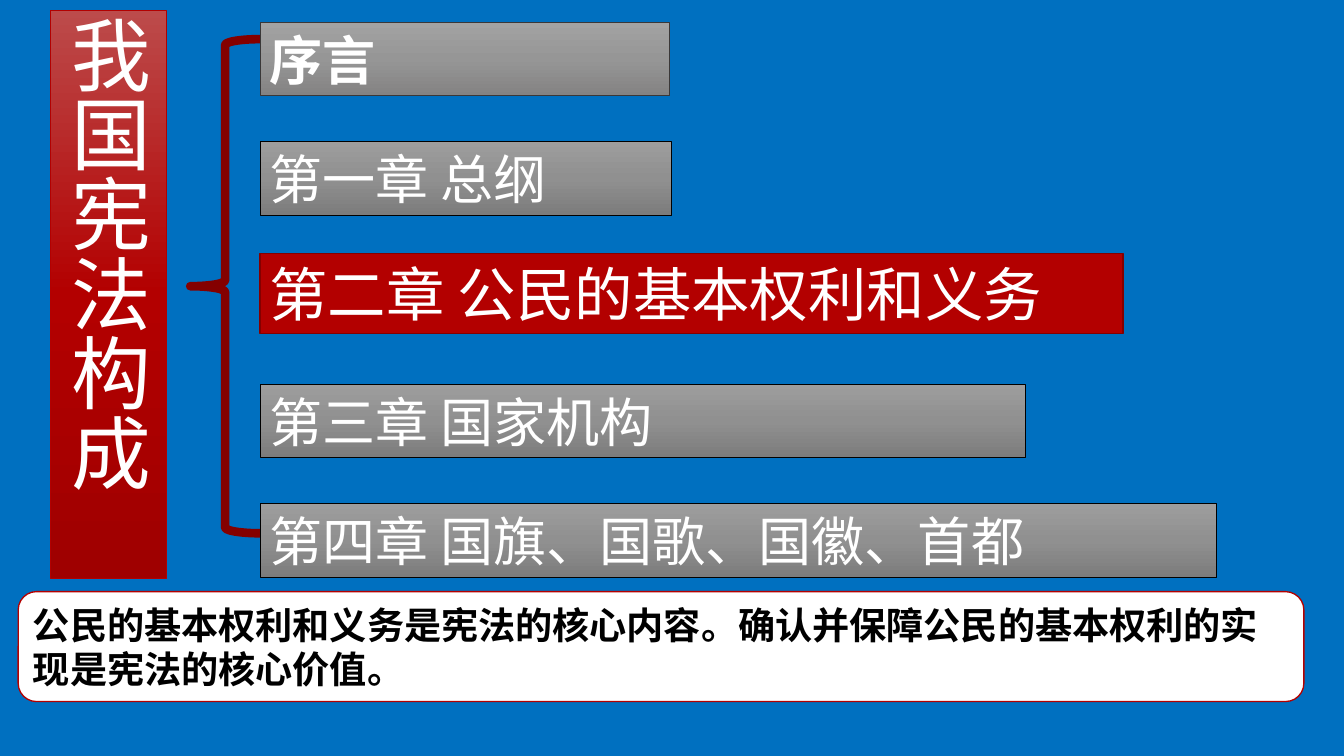
import copy
import pptx
import pptx.util
import pptx.dml.color
import pptx.enum.shapes
import pptx.enum.text
import pptx.oxml.ns
from lxml import etree

SIZE = (14.06, 7.91)
FONT = "Calibri"
COLORS = {
    "back": "0070C0", "white": "FFFFFF", "black": "000000",
    "red": "B30000", "dark": "840000", "slate": "3A3838",
}
FADES = {
    "title": ("BC4B4B", "B30000", "9F0000"),
    "intro": ("A3A3A3", "969696", "848383"),
    "plain": ("9D9D9D", "909090", "7C7C7C"),
}
TITLE = "我国宪法构成"
LEFT = 2.72  # shared left edge of the chapter bars
# text, top, width, height, fill, line colour, line width, size, bold
BARS = [
    ("序言", 0.23, 4.28, 0.77, "intro", "slate", 0.5, 40, True),
    ("第一章 总纲", 1.48, 4.3, 0.77, "plain", "black", 0.5, 40, False),
    ("第二章 公民的基本权利和义务", 2.65, 9.03, 0.84, "red", "dark", 1, 44, False),
    ("第三章 国家机构", 4.02, 8.01, 0.77, "plain", "black", 0.5, 40, False),
    ("第四章 国旗、国歌、国徽、首都", 5.27, 10.01, 0.77, "plain", "black", 0.5, 40, False),
]
NOTE = "公民的基本权利和义务是宪法的核心内容。确认并保障公民的基本权利的实现是宪法的核心价值。"

KINDS = pptx.enum.shapes.MSO_SHAPE
qn = pptx.oxml.ns.qn


def tint(name):
    return pptx.dml.color.RGBColor.from_string(COLORS[name])


def place(shape, *box):
    shape.left, shape.top, shape.width, shape.height = map(pptx.util.Inches, box)


def paint(shape, fill, line, width):
    """Fill with a plain colour or a three-stop fade, then set the outline."""
    if fill in FADES:
        shape.fill.gradient()
        shape.fill.gradient_angle = 270
        stops = shape._element.spPr.find(".//" + qn("a:gsLst"))
        stops.append(copy.deepcopy(stops[-1]))
        for i, (stop, shade) in enumerate(zip(shape.fill.gradient_stops, FADES[fill])):
            stop.position = i / 2
            stop.color.rgb = pptx.dml.color.RGBColor.from_string(shade)
    elif fill:
        shape.fill.solid()
        shape.fill.fore_color.rgb = tint(fill)
    else:
        shape.fill.background()
    shape.line.color.rgb = tint(line)
    shape.line.width = pptx.util.Pt(width)


def write(shape, text, size, color="white", bold=False, font=FONT):
    frame = shape.text_frame
    frame.word_wrap = True
    frame.auto_size = pptx.enum.text.MSO_AUTO_SIZE.NONE
    frame.vertical_anchor = pptx.enum.text.MSO_ANCHOR.MIDDLE
    para = frame.paragraphs[0]
    para.alignment = pptx.enum.text.PP_ALIGN.LEFT
    run = para.add_run()
    run.text = text
    run.font.size = pptx.util.Pt(size)
    run.font.bold = bold
    run.font.name = font
    run.font.color.rgb = tint(color)
    # East Asian text keeps the line height of the main font
    etree.SubElement(run._r.get_or_add_rPr(), qn("a:ea")).set("typeface", FONT)


def add(slide, kind, box, fill, line, width):
    shape = slide.shapes.add_shape(kind, *map(pptx.util.Inches, box))
    shape.shadow.inherit = False
    paint(shape, fill, line, width)
    return shape


def main():
    deck = pptx.Presentation()
    deck.slide_width, deck.slide_height = map(pptx.util.Inches, SIZE)
    slide = deck.slides.add_slide(deck.slide_layouts[5])
    slide.background.fill.solid()
    slide.background.fill.fore_color.rgb = tint("back")

    title = slide.shapes.title
    place(title, 0.53, 0.11, 1.21, 5.94)
    paint(title, "title", "red", 0.5)
    write(title, TITLE, 60)
    title.text_frame._txBody.bodyPr.set("vert", "eaVert")

    add(slide, KINDS.LEFT_BRACE, (1.99, 0.41, LEFT - 1.99, 5.17), None, "dark", 6.5)

    for text, top, wide, high, fill, line, width, size, bold in BARS:
        bar = add(slide, KINDS.RECTANGLE, (LEFT, top, wide, high), fill, line, width)
        write(bar, text, size, bold=bold)

    note = add(slide, KINDS.ROUNDED_RECTANGLE, (0.19, 6.19, 13.45, 1.15), "white", "red", 1)
    write(note, NOTE, 28, "black", True, "Noto Sans CJK SC")

    deck.save("out.pptx")


if __name__ == "__main__":
    main()
